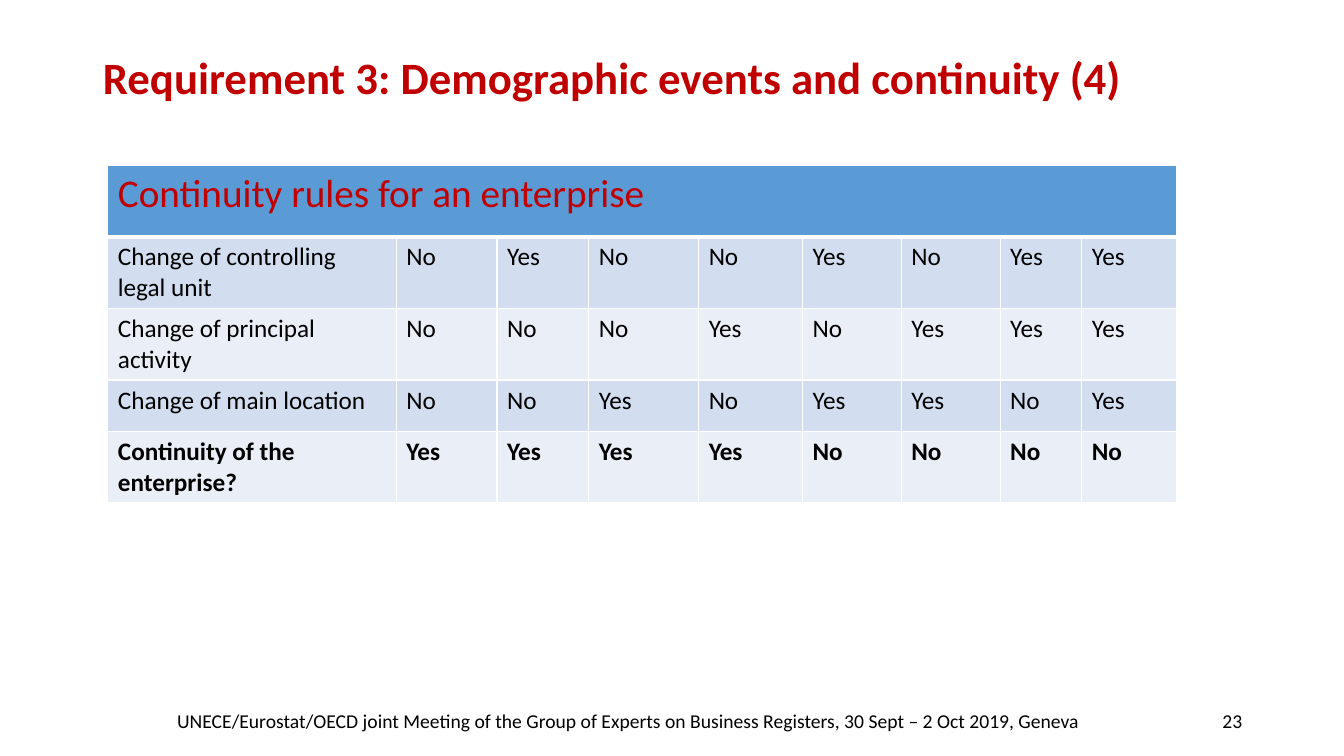
"""Build the slide on continuity rules for an enterprise."""
from dataclasses import dataclass

import lxml.etree
import pptx
import pptx.dml.color
import pptx.enum.text
import pptx.oxml.ns
import pptx.util

Inches = pptx.util.Inches
Align = pptx.enum.text.PP_ALIGN
FONT = "Calibri"
RED, BLACK, WHITE = "C00000", "000000", "FFFFFF"
HEAD, BANDS = "5B9BD5", ("D2DEEF", "EAEFF7")
COLS = (2.86, 1, 0.91, 1.09, 1.03, 0.98, 0.98, 0.81, 0.94)
ROWS = (0.71, 0.71, 0.71, 0.51, 0.71)


@dataclass
class Note:
    text: str
    left: float
    width: float
    align: Align


@dataclass
class Rule:
    label: str
    marks: str
    bold: bool = False


NOTES = (
    Note("UNECE/Eurostat/OECD joint Meeting of the Group of Experts on Business "
         "Registers, 30 Sept – 2 Oct 2019, Geneva", 1.32, 9.83, Align.CENTER),
    Note("23", 9.42, 3, Align.RIGHT),
)
RULES = (
    Rule("Change of controlling legal unit", "No Yes No No Yes No Yes Yes"),
    Rule("Change of principal activity", "No No No Yes No Yes Yes Yes"),
    Rule("Change of main location", "No No Yes No Yes Yes No Yes"),
    Rule("Continuity of the enterprise?", "Yes Yes Yes Yes No No No No", True),
)


def shade(code: str) -> pptx.dml.color.RGBColor:
    return pptx.dml.color.RGBColor.from_string(code)


def write(frame, text: str, size: float, color: str = BLACK,
          bold: bool = False, align: Align = Align.LEFT):
    frame.text = text
    par = frame.paragraphs[0]
    par.alignment = align
    par.font.name, par.font.size, par.font.bold = FONT, pptx.util.Pt(size), bold
    par.font.color.rgb = shade(color)
    return par


def place(shape, left: float, top: float, width: float, height: float) -> None:
    shape.left, shape.top = Inches(left), Inches(top)
    shape.width, shape.height = Inches(width), Inches(height)


def edge(cell, side: str, width: float) -> None:
    name = pptx.oxml.ns.qn
    props = cell._tc.get_or_add_tcPr()
    line = lxml.etree.SubElement(props, name(f"a:ln{side}"), w=str(pptx.util.Pt(width)))
    fill = lxml.etree.SubElement(line, name("a:solidFill"))
    lxml.etree.SubElement(fill, name("a:srgbClr"), val=WHITE)


def paint(cell, color: str, top: float = 1, base: float = 1) -> None:
    for side, width in (("L", 1), ("R", 1), ("T", top), ("B", base)):
        edge(cell, side, width)
    cell.fill.solid()
    cell.fill.fore_color.rgb = shade(color)


def add_title(slide) -> None:
    title = slide.shapes.title
    place(title, 0.92, 0.41, 11.5, 0.76)
    frame = title.text_frame
    frame.auto_size = pptx.enum.text.MSO_AUTO_SIZE.NONE
    frame.vertical_anchor = pptx.enum.text.MSO_ANCHOR.MIDDLE
    par = write(frame, "Requirement 3: Demographic events and continuity (4)", 32, RED, True)
    par.line_spacing = 0.9


def add_note(slide, note: Note) -> None:
    box = slide.shapes.add_textbox(
        Inches(note.left), Inches(6.95), Inches(note.width), Inches(0.4))
    frame = box.text_frame
    frame.word_wrap = True
    frame.vertical_anchor = pptx.enum.text.MSO_ANCHOR.MIDDLE
    write(frame, note.text, 14, align=note.align)


def add_grid(slide) -> None:
    grid = slide.shapes.add_table(
        len(ROWS), len(COLS), Inches(1.07), Inches(1.64),
        Inches(sum(COLS)), Inches(sum(ROWS))).table
    for col, width in zip(grid.columns, COLS):
        col.width = Inches(width)
    for row, height in zip(grid.rows, ROWS):
        row.height = Inches(height)
    for cell in grid.rows[0].cells:
        paint(cell, HEAD, base=3)
    head = grid.cell(0, 0)
    head.merge(grid.cell(0, len(COLS) - 1))
    par = write(head.text_frame, "Continuity rules for an enterprise", 28, RED)
    par.space_after = pptx.util.Pt(6)
    for row, rule in enumerate(RULES, 1):
        for col, text in enumerate((rule.label, *rule.marks.split())):
            cell = grid.cell(row, col)
            paint(cell, BANDS[(row - 1) % 2], top=3 if row == 1 else 1)
            write(cell.text_frame, text, 18, bold=rule.bold)


def main() -> None:
    deck = pptx.Presentation()
    deck.slide_width, deck.slide_height = Inches(13.33), Inches(7.5)
    slide = deck.slides.add_slide(deck.slide_layouts[5])
    add_title(slide)
    for note in NOTES:
        add_note(slide, note)
    add_grid(slide)
    deck.save("out.pptx")


if __name__ == "__main__":
    main()
